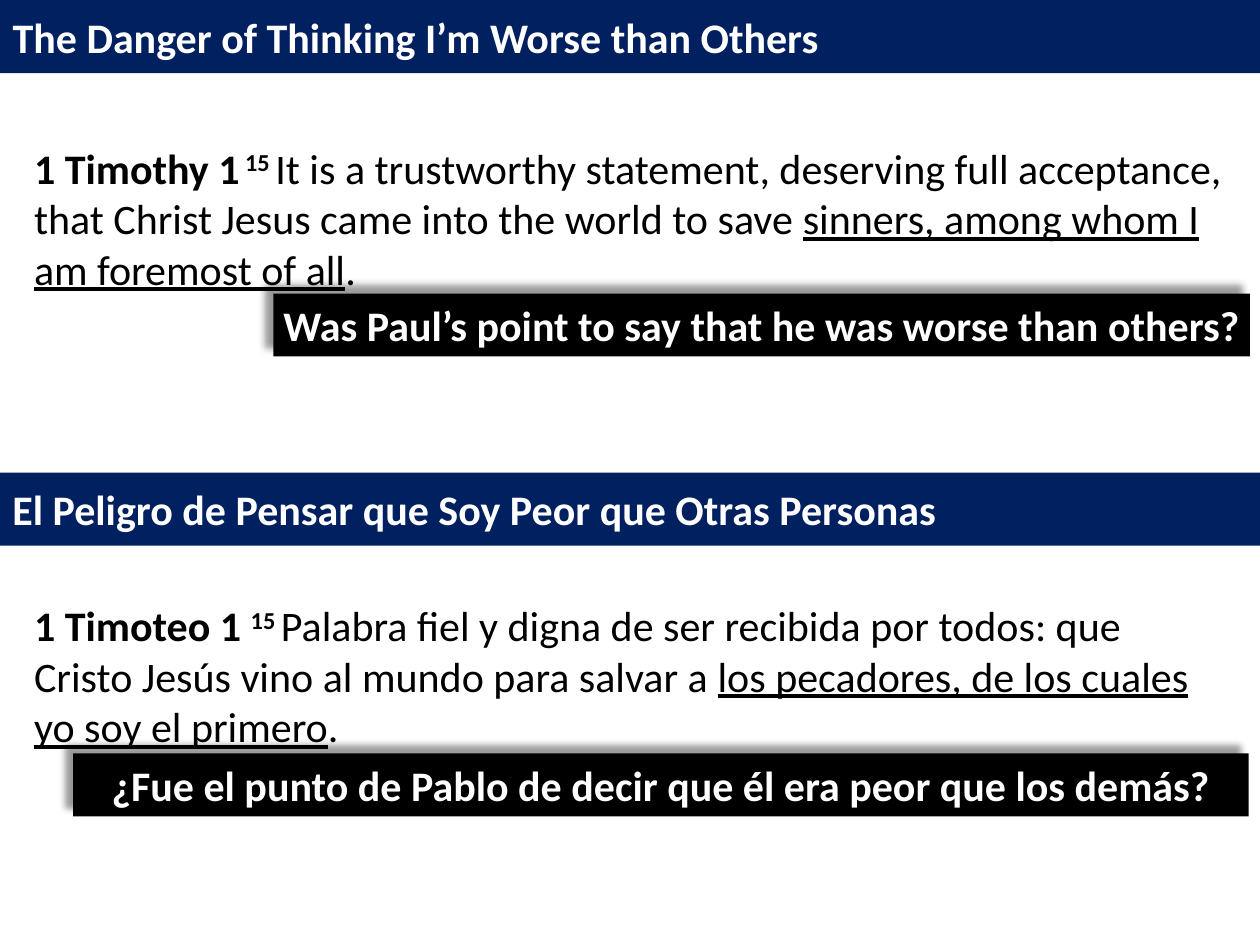
"""Build a bilingual slide: a banner, a verse and a question in each half."""
from dataclasses import dataclass

from lxml.etree import SubElement
from pptx import Presentation
from pptx.dml.color import RGBColor as RGB
from pptx.enum.shapes import MSO_SHAPE as Kind
from pptx.enum.text import MSO_ANCHOR as Anchor, MSO_AUTO_SIZE as Fit, PP_ALIGN as Align
from pptx.oxml.ns import qn
from pptx.util import Inches, Pt


@dataclass(frozen=True)
class Theme:
    navy: str = "002060"
    black: str = "000000"
    white: str = "FFFFFF"
    font: str = "Calibri"
    size: int = 24


THEME = Theme()
WIDE, HIGH = 10, 7.5
HALF = HIGH / 2
BOLD, PLAIN, LINED = {"bold": True}, {"bold": False}, {"bold": False, "underline": True}

PANELS = [
    {
        "title": "The Danger of Thinking I’m Worse than Others",
        "verse": [
            ("1 Timothy 1", BOLD, 0),
            (" 15 ", BOLD, 30),
            ("It is a trustworthy statement, deserving full acceptance, "
             "that Christ Jesus came into the world to save ", PLAIN, 0),
            ("sinners, among whom I am foremost of all", LINED, 0),
            (".", PLAIN, 0),
        ],
        "ask": "Was Paul’s point to say that he was worse than others?",
        "verse_box": (0.17, 1.08, 9.67, 1.31),
        "ask_box": (2.17, 2.33, 7.75, 0.5),
        "slot": 1,
    },
    {
        "title": "El Peligro de Pensar que Soy Peor que Otras Personas",
        "verse": [
            ("1 Timoteo 1 ", BOLD, 0),
            ("15 ", BOLD, 30),
            ("Palabra fiel y digna de ser recibida por todos: "
             "que Cristo Jesús vino al mundo para salvar a ", PLAIN, 0),
            ("los pecadores, de los cuales yo soy el primero", LINED, 0),
            (".", PLAIN, 0),
        ],
        "ask": "¿Fue el punto de Pablo de decir que él era peor que los demás?",
        "verse_box": (0.17, 0.96, 9.67, 1.31),
        "ask_box": (0.58, 2.23, 9.33, 0.5),
        "slot": 3,
    },
]


def place(shape, box, top):
    x, y, w, h = box
    spots = {"left": x, "top": top + y, "width": w, "height": h}
    for name, value in spots.items():
        setattr(shape, name, Inches(value))


def paint(shape, color):
    shape.shadow.inherit = False
    shape.fill.solid()
    shape.fill.fore_color.rgb = RGB.from_string(color)
    shape.line.fill.background()


def write(shape, runs, color, align=Align.LEFT, **frame):
    text = shape.text_frame
    for name, value in {"word_wrap": True, **frame}.items():
        setattr(text, name, value)
    para = text.paragraphs[0]
    for name, value in {"alignment": align, "space_before": Pt(0)}.items():
        setattr(para, name, value)
    for words, style, lift in runs:
        run = para.add_run()
        run.text = words
        look = {"name": THEME.font, "size": Pt(THEME.size), **style}
        for name, value in look.items():
            setattr(run.font, name, value)
        run.font.color.rgb = RGB.from_string(color)
        if lift:
            run.font._element.set("baseline", str(lift * 1000))


def shade(shape):
    effect = shape._element.spPr.find(qn("a:effectLst"))
    shadow = SubElement(effect, qn("a:outerShdw"), blurRad=str(Pt(4)), dist=str(Pt(7)),
                        dir=str(225 * 60000), algn="br", rotWithShape="0")
    tint = SubElement(shadow, qn("a:srgbClr"), val=THEME.black)
    SubElement(tint, qn("a:alpha"), val="40000")


def build():
    deck = Presentation()
    deck.slide_width, deck.slide_height = Inches(WIDE), Inches(HIGH)
    slide = deck.slides.add_slide(deck.slide_layouts[4])
    shapes = slide.shapes
    slots = {item.placeholder_format.idx: item for item in slide.placeholders}

    def block():
        return shapes.add_shape(Kind.RECTANGLE, 0, 0, 0, 0)

    for row, panel in enumerate(PANELS):
        top = row * HALF
        banner = block() if row else shapes.title
        place(banner, (0, 0, WIDE, 0.58), top)
        paint(banner, THEME.navy)
        write(banner, [(panel["title"], BOLD, 0)], THEME.white,
              vertical_anchor=Anchor.MIDDLE, auto_size=Fit.NONE)

        verse = slots[panel["slot"]]
        place(verse, panel["verse_box"], top)
        write(verse, panel["verse"], THEME.black,
              vertical_anchor=Anchor.TOP, auto_size=Fit.SHAPE_TO_FIT_TEXT)

        ask = block()
        place(ask, panel["ask_box"], top)
        paint(ask, THEME.black)
        shade(ask)
        write(ask, [(panel["ask"], BOLD, 0)], THEME.white, Align.CENTER,
              vertical_anchor=Anchor.TOP, auto_size=Fit.SHAPE_TO_FIT_TEXT,
              margin_left=0, margin_right=0)

    for item in slots.values():
        if not item.text_frame.text:
            item._element.getparent().remove(item._element)
    deck.save("out.pptx")


if __name__ == "__main__":
    build()
